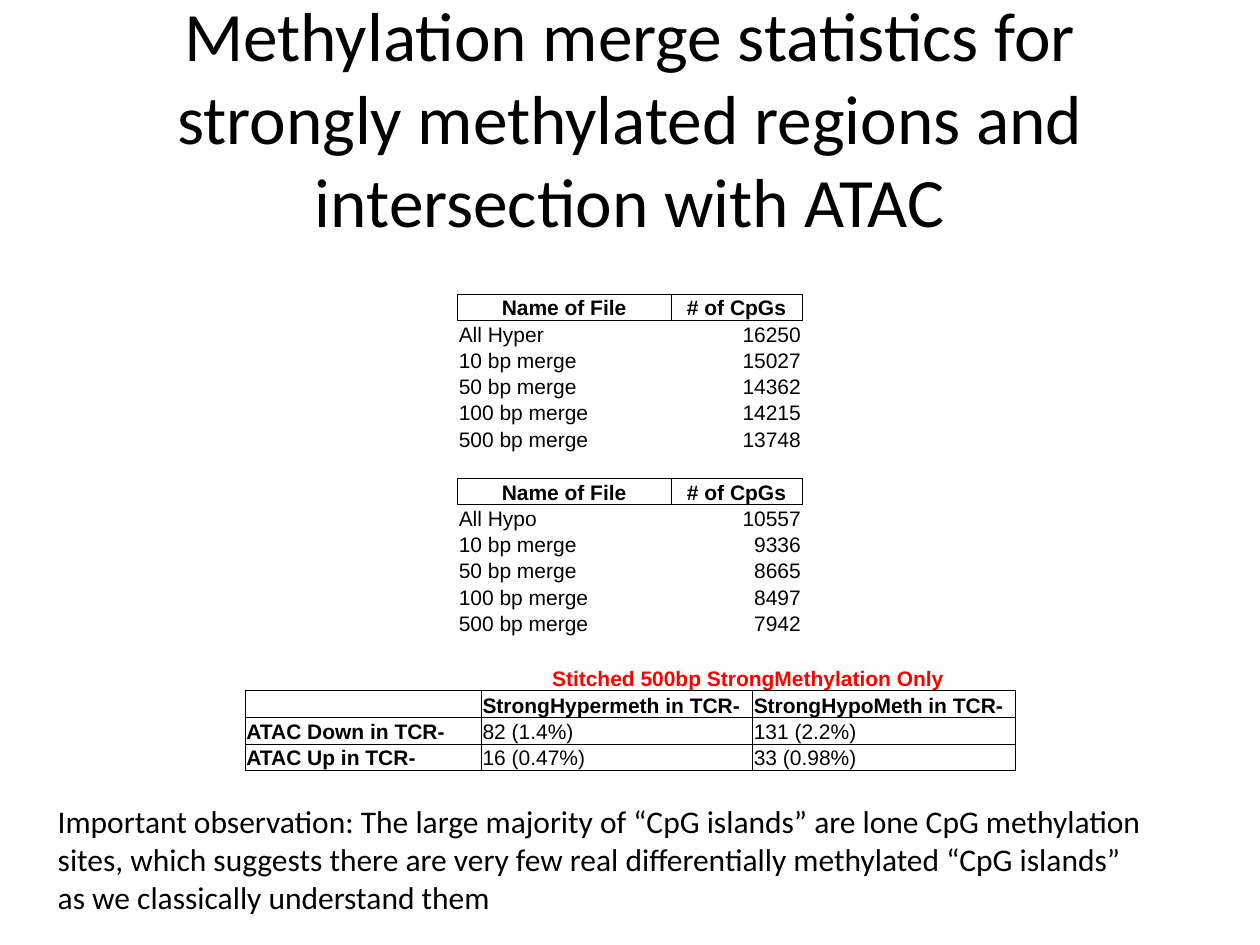
from dataclasses import dataclass

from lxml.etree import SubElement as Sub
from pptx import Presentation
from pptx.dml.color import RGBColor as RGB
from pptx.enum.text import MSO_ANCHOR as Anchor, MSO_AUTO_SIZE as Auto, PP_ALIGN as Align
from pptx.oxml.ns import qn
from pptx.util import Pt

HUES = {"ink": "000000", "alert": "FF0000"}
PLAIN = "{2D5ABB26-0587-4C30-8999-92F81FD0307C}"
ROW = 15


@dataclass
class Cell:
    text: str = ""
    bold: bool = False
    align: Align = Align.LEFT
    hue: str = "ink"
    box: bool = False
    span: int = 1


@dataclass
class Grid:
    left: float
    top: float
    cols: list[float]
    rows: list[list[Cell]]


def put(frame, text: str, *, size: float = 12, font: str = "Arial",
        hue: str = "ink", bold: bool = False, align: Align = Align.LEFT) -> None:
    para = frame.paragraphs[0]
    para.alignment = align
    if not text:
        Sub(para._p, qn("a:endParaRPr"), sz=str(int(size * 100)))
        return
    run = para.add_run()
    run.text = text
    run.font.size = Pt(size)
    run.font.name = font
    run.font.bold = bold
    run.font.color.rgb = RGB.from_string(HUES[hue])


def edge(cell) -> None:
    props = cell._tc.get_or_add_tcPr()
    for side in "LRTB":
        line = Sub(props, qn(f"a:ln{side}"), w=str(Pt(0.5)))
        fill = Sub(line, qn("a:solidFill"))
        Sub(fill, qn("a:srgbClr"), val=HUES["ink"])


def draw(slide, grid: Grid) -> None:
    count = len(grid.rows)
    frame = slide.shapes.add_table(count, len(grid.cols), Pt(grid.left), Pt(grid.top),
                                   Pt(sum(grid.cols)), Pt(ROW * count))
    table = frame.table
    table.first_row = table.horz_banding = False
    table._tbl.tblPr.find(qn("a:tableStyleId")).text = PLAIN
    for col, width in zip(table.columns, grid.cols):
        col.width = Pt(width)
    for r, row in enumerate(grid.rows):
        table.rows[r].height = Pt(ROW)
        for c, item in enumerate(row):
            cell = table.cell(r, c)
            if item.span > 1:
                cell.merge(table.cell(r, c + item.span - 1))
            cell.margin_left = cell.margin_right = cell.margin_top = Pt(0.75)
            cell.margin_bottom = 0
            cell.vertical_anchor = Anchor.BOTTOM
            if item.box:
                edge(cell)
            cell.fill.background()
            put(cell.text_frame, item.text, bold=item.bold, hue=item.hue, align=item.align)


def block(kind: str, counts: list[int]) -> list[list[Cell]]:
    names = [f"All {kind}"] + [f"{gap} bp merge" for gap in (10, 50, 100, 500)]
    head = [Cell(text, True, Align.CENTER, box=True) for text in ("Name of File", "# of CpGs")]
    return [head] + [[Cell(name), Cell(str(num), align=Align.RIGHT)]
                     for name, num in zip(names, counts)]


def main() -> None:
    deck = Presentation()
    deck.slide_width, deck.slide_height = Pt(720), Pt(540)
    slide = deck.slides.add_slide(deck.slide_layouts[5])

    title = slide.shapes.title
    title.left, title.top, title.width, title.height = Pt(36), Pt(21.6), Pt(648), Pt(90)
    title.text_frame.auto_size = Auto.NONE
    title.text_frame.vertical_anchor = Anchor.MIDDLE
    put(title.text_frame, "Methylation merge statistics for strongly methylated regions "
        "and intersection with ATAC", size=39.6, font="Calibri", align=Align.CENTER)

    merge = (block("Hyper", [16250, 15027, 14362, 14215, 13748])
             + [[Cell(), Cell()]]
             + block("Hypo", [10557, 9336, 8665, 8497, 7942]))
    draw(slide, Grid(261.4, 168, [122, 75], merge))

    cross = [
        ["", "StrongHypermeth in TCR-", "StrongHypoMeth in TCR-"],
        ["ATAC Down in TCR-", "82 (1.4%)", "131 (2.2%)"],
        ["ATAC Up in TCR-", "16 (0.47%)", "33 (0.98%)"],
    ]
    head = [Cell(), Cell("Stitched 500bp StrongMethylation Only", True, Align.CENTER,
                         "alert", span=2)]
    body = [[Cell(text, bold=r == 0 or c == 0, box=True) for c, text in enumerate(row)]
            for r, row in enumerate(cross)]
    draw(slide, Grid(140, 379.3, [135, 155, 150], [head] + body))

    note = slide.shapes.add_textbox(Pt(25.9), Pt(455), Pt(637), Pt(72.7)).text_frame
    note.word_wrap = True
    note.auto_size = Auto.SHAPE_TO_FIT_TEXT
    put(note, "Important observation: The large majority of “CpG islands” are lone CpG "
        "methylation sites, which suggests there are very few real differentially "
        "methylated “CpG islands” as we classically understand them",
        size=18, font="Calibri")

    deck.save("out.pptx")


if __name__ == "__main__":
    main()
